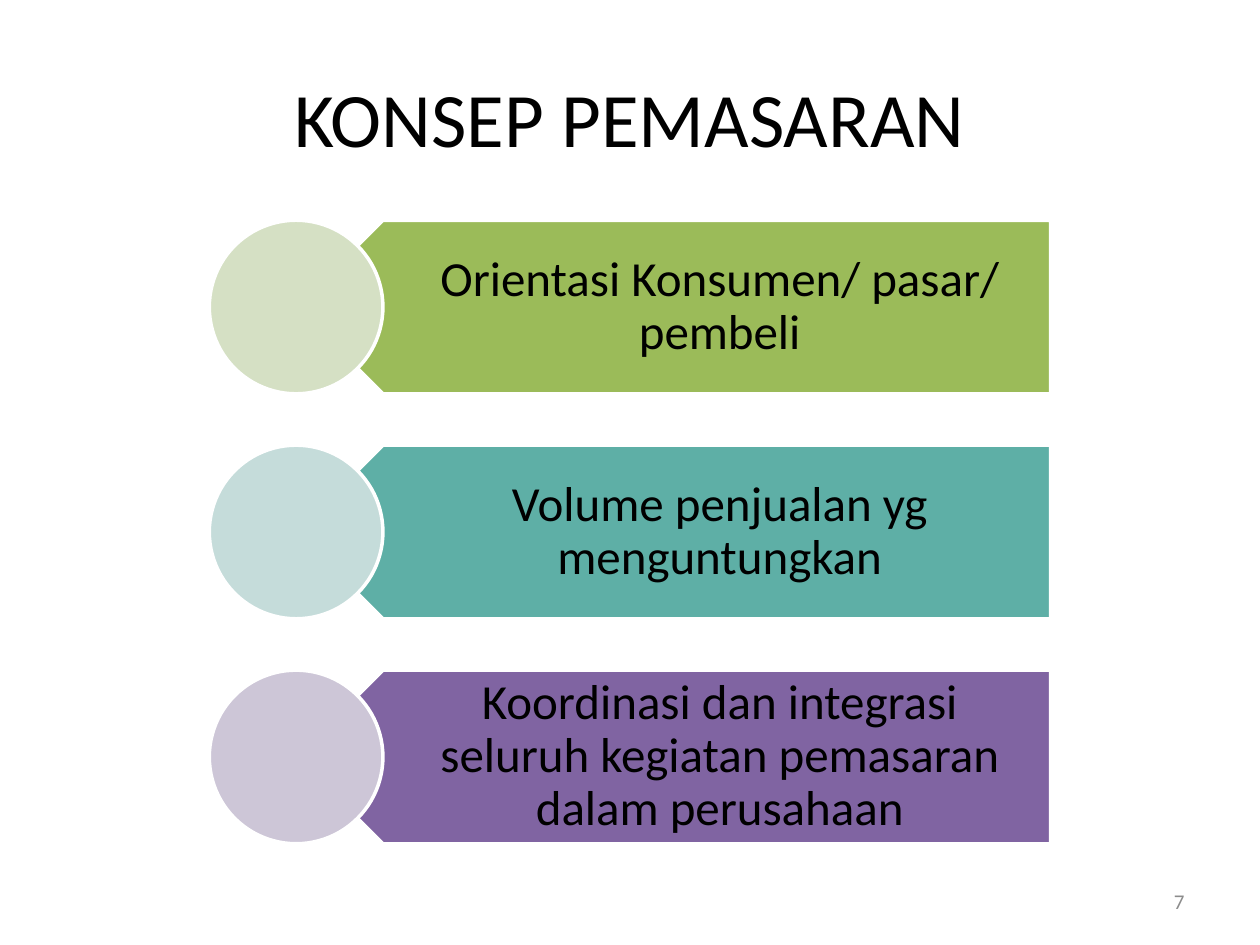
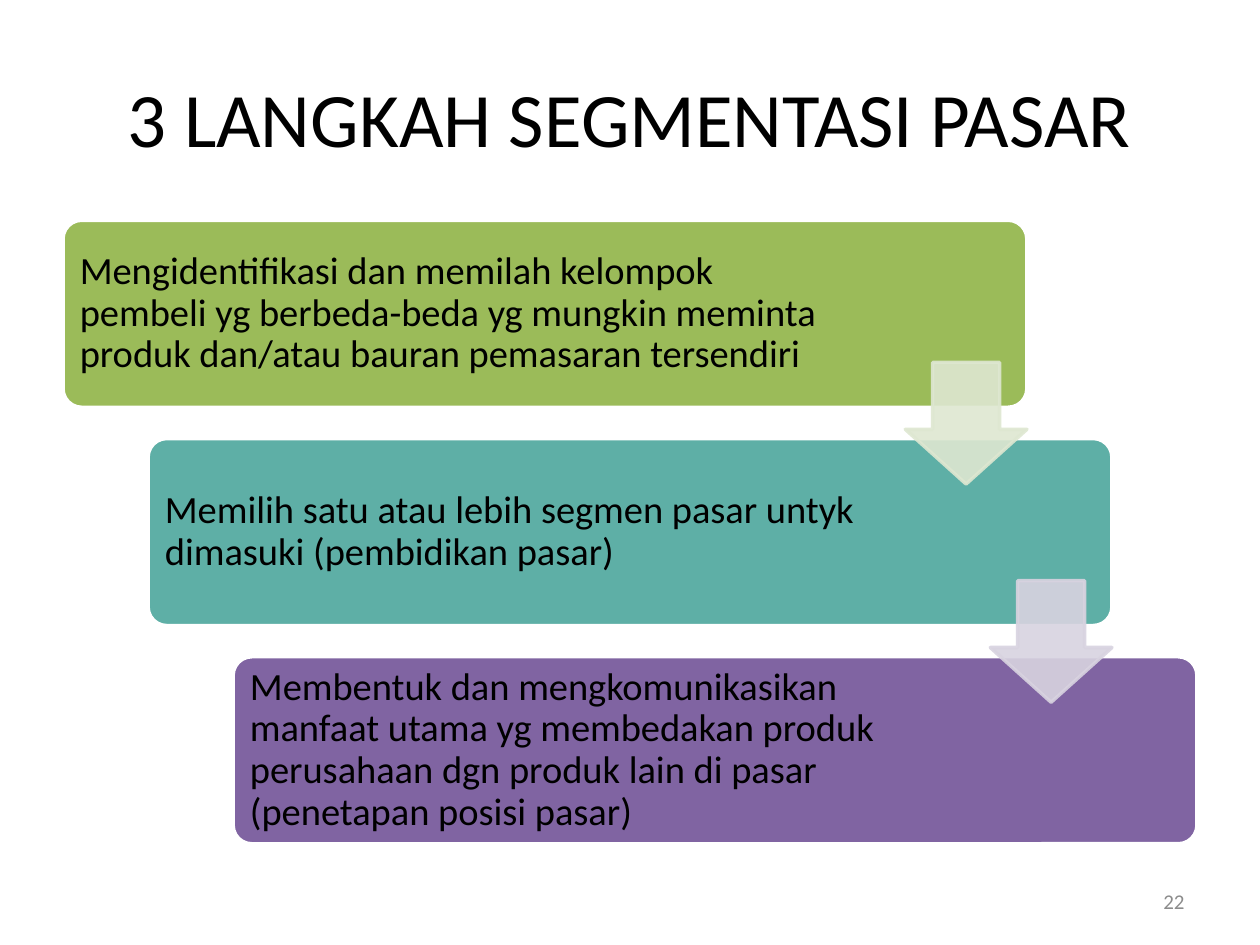
import pptx
import pptx.dml.color
import pptx.enum.shapes
import pptx.enum.text
import pptx.oxml
import pptx.oxml.ns
import pptx.util

Cm = pptx.util.Cm
Pt = pptx.util.Pt
SHAPE = pptx.enum.shapes.MSO_SHAPE
ALIGN = pptx.enum.text.PP_ALIGN

FONT = "Calibri"
BLACK, GREY, WHITE = "000000", "8C8C8C", "FFFFFF"
GREEN, TEAL, PURPLE = "9BBB59", "5EAFA6", "8064A2"
PALE_GREEN, PALE_TEAL, PALE_PURPLE = "D5E0C4", "C5DCDA", "CDC6D7"
ARROW_GREEN, ARROW_PURPLE = "DEE7D1", "D8D3E0"

# Boxes are left, top, width, height in centimetres
TITLE_BOX = (1.27, 0.76, 22.86, 3.18)
BODY_BOX = (1.27, 4.44, 22.86, 12.57)
NUMBER_BOX = (18.21, 17.65, 5.92, 1.02)
DEFAULT_INSETS = (0.25, 0.13, 0.25, 0.13)

CONCEPTS = [
    ("Orientasi Konsumen/ pasar/ pembeli", GREEN, PALE_GREEN),
    ("Volume penjualan yg menguntungkan", TEAL, PALE_TEAL),
    ("Koordinasi dan integrasi seluruh kegiatan pemasaran dalam perusahaan",
     PURPLE, PALE_PURPLE),
]

# Text, card colour, text width
STEPS = [
    ("Mengidentifikasi dan memilah kelompok pembeli yg berbeda-beda yg mungkin "
     "meminta produk dan/atau bauran pemasaran tersendiri", GREEN, 15.37),
    ("Memilih satu atau lebih segmen pasar untyk dimasuki (pembidikan pasar)",
     TEAL, 15.04),
    ("Membentuk dan mengkomunikasikan manfaat utama yg membedakan produk "
     "perusahaan dgn produk lain di pasar (penetapan posisi pasar)",
     PURPLE, 15.04),
]
STEP_ARROWS = [ARROW_GREEN, ARROW_PURPLE]


def color(value):
    return pptx.dml.color.RGBColor.from_string(value)


def add_text(page, box, text, size, align, ink=BLACK, insets=DEFAULT_INSETS,
             line_spacing=1.0):
    frame = page.shapes.add_textbox(*map(Cm, box)).text_frame
    frame.word_wrap = True
    frame.vertical_anchor = pptx.enum.text.MSO_ANCHOR.MIDDLE
    (frame.margin_left, frame.margin_top,
     frame.margin_right, frame.margin_bottom) = map(Cm, insets)
    para = frame.paragraphs[0]
    para.text = text
    para.alignment = align
    para.line_spacing = line_spacing
    para.font.name = FONT
    para.font.size = Pt(size)
    para.font.color.rgb = color(ink)


def add_block(page, kind, box, fill, line=WHITE, adjustments=()):
    shape = page.shapes.add_shape(kind, *map(Cm, box))
    shape.shadow.inherit = False
    shape.fill.solid()
    shape.fill.fore_color.rgb = color(fill)
    shape.line.color.rgb = color(line)
    shape.line.width = Pt(2)
    for index, value in enumerate(adjustments):
        shape.adjustments[index] = value
    return shape


def set_opacity(shape, percent):
    """Make both the fill and the outline partly transparent."""
    tag = pptx.oxml.ns.qn("a:srgbClr")
    for node in shape.fill._xPr.iter(tag):
        alpha = pptx.oxml.parse_xml(
            f'<a:alpha {pptx.oxml.ns.nsdecls("a")} val="{percent * 1000}"/>')
        node.append(alpha)


def add_page(deck, title, number):
    """Add a slide with the shared title and slide number."""
    page = deck.slides.add_slide(deck.slide_layouts[6])
    add_text(page, TITLE_BOX, title, 44, ALIGN.CENTER)
    add_text(page, NUMBER_BOX, str(number), 12, ALIGN.RIGHT, GREY)
    return page


def add_concept_list(page, box):
    """Stack pointed bars, each with a circle over its tip."""
    left, top, width, height = box
    diameter, bar_width = 3.5, 15.21
    pitch = (height - diameter) / (len(CONCEPTS) - 1)
    circle_left = left + (width - bar_width - diameter / 2) / 2
    bar_left = circle_left + diameter / 2
    tip = diameter / 4
    for row, (text, fill, pale) in enumerate(CONCEPTS):
        y = top + row * pitch
        bar = add_block(page, SHAPE.PENTAGON,
                        (bar_left, y, bar_width, diameter), fill)
        bar.rotation = 180
        add_text(page, (bar_left + tip, y, bar_width - tip, diameter), text, 28,
                 ALIGN.CENTER, insets=(1.55, 0.3, 0.56, 0.3), line_spacing=0.9)
        add_block(page, SHAPE.OVAL, (circle_left, y, diameter, diameter), pale)


def add_step_cascade(page, box):
    """Place cards down a staircase, then the arrows that join them."""
    left, top, width, height = box
    card_width, card_height = 0.85 * width, 0.3 * height
    shift = (width - card_width) / (len(STEPS) - 1)
    pitch = (height - card_height) / (len(STEPS) - 1)
    edge = 0.11
    for row, (text, fill, text_width) in enumerate(STEPS):
        x, y = left + row * shift, top + row * pitch
        add_block(page, SHAPE.ROUNDED_RECTANGLE,
                  (x, y, card_width, card_height), fill, adjustments=[0.1])
        add_text(page, (x + edge, y + edge, text_width, card_height - 2 * edge),
                 text, 22, ALIGN.LEFT, insets=(0.23,) * 4, line_spacing=0.9)

    arrow_size = 0.65 * card_height
    for row, fill in enumerate(STEP_ARROWS):
        x = left + row * shift + card_width - arrow_size
        y = top + row * pitch + 0.76 * card_height
        arrow = add_block(page, SHAPE.DOWN_ARROW, (x, y, arrow_size, arrow_size),
                          fill, line=fill)
        # The head length comes second, the shaft width first
        arrow.adjustments[0], arrow.adjustments[1] = 0.55, 0.45
        set_opacity(arrow, 90)


def main():
    deck = pptx.Presentation()
    deck.slide_width, deck.slide_height = Cm(25.4), Cm(19.05)
    add_concept_list(add_page(deck, "KONSEP PEMASARAN", 7), BODY_BOX)
    add_step_cascade(add_page(deck, "3 LANGKAH SEGMENTASI PASAR", 22), BODY_BOX)
    deck.save("out.pptx")


if __name__ == "__main__":
    main()
